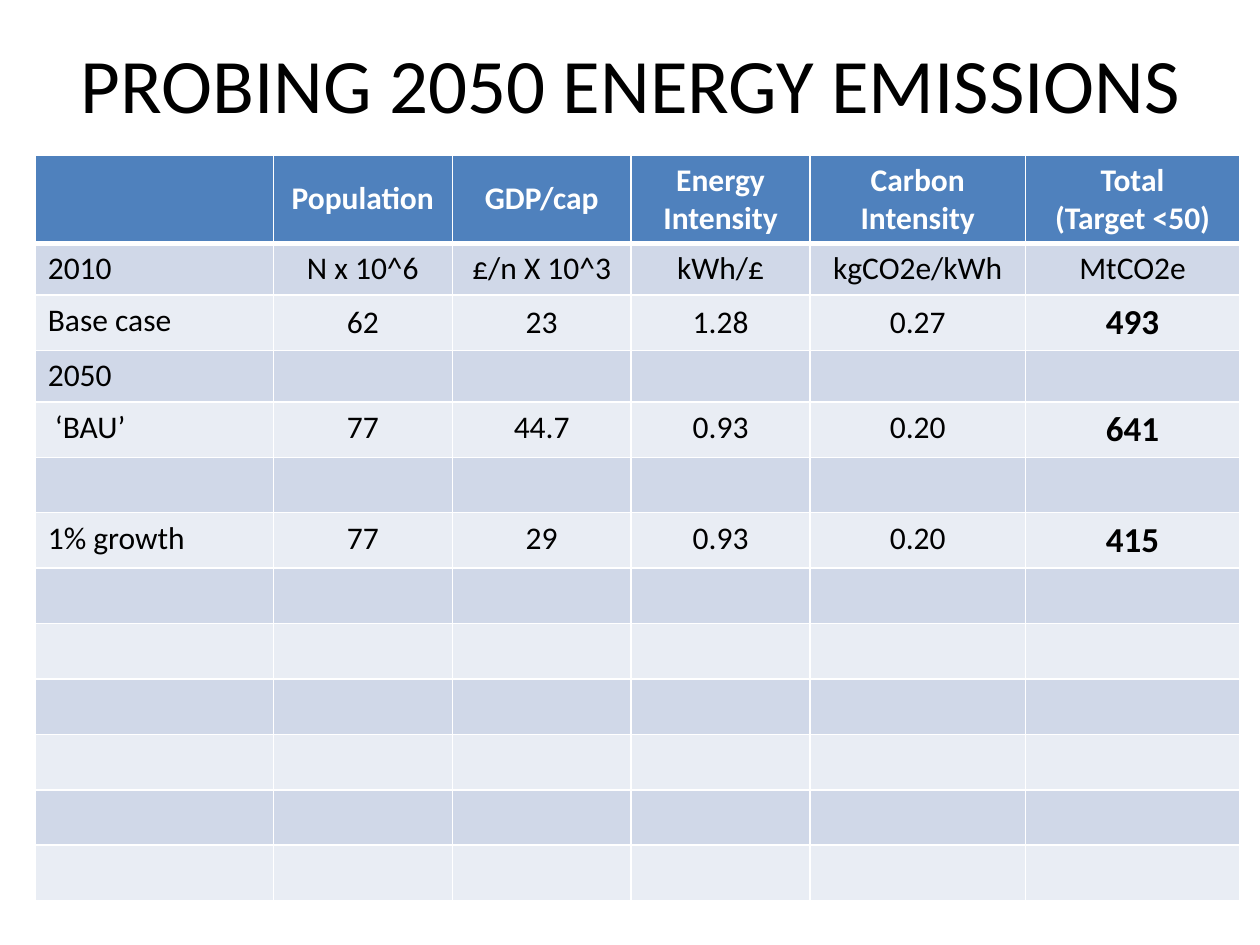
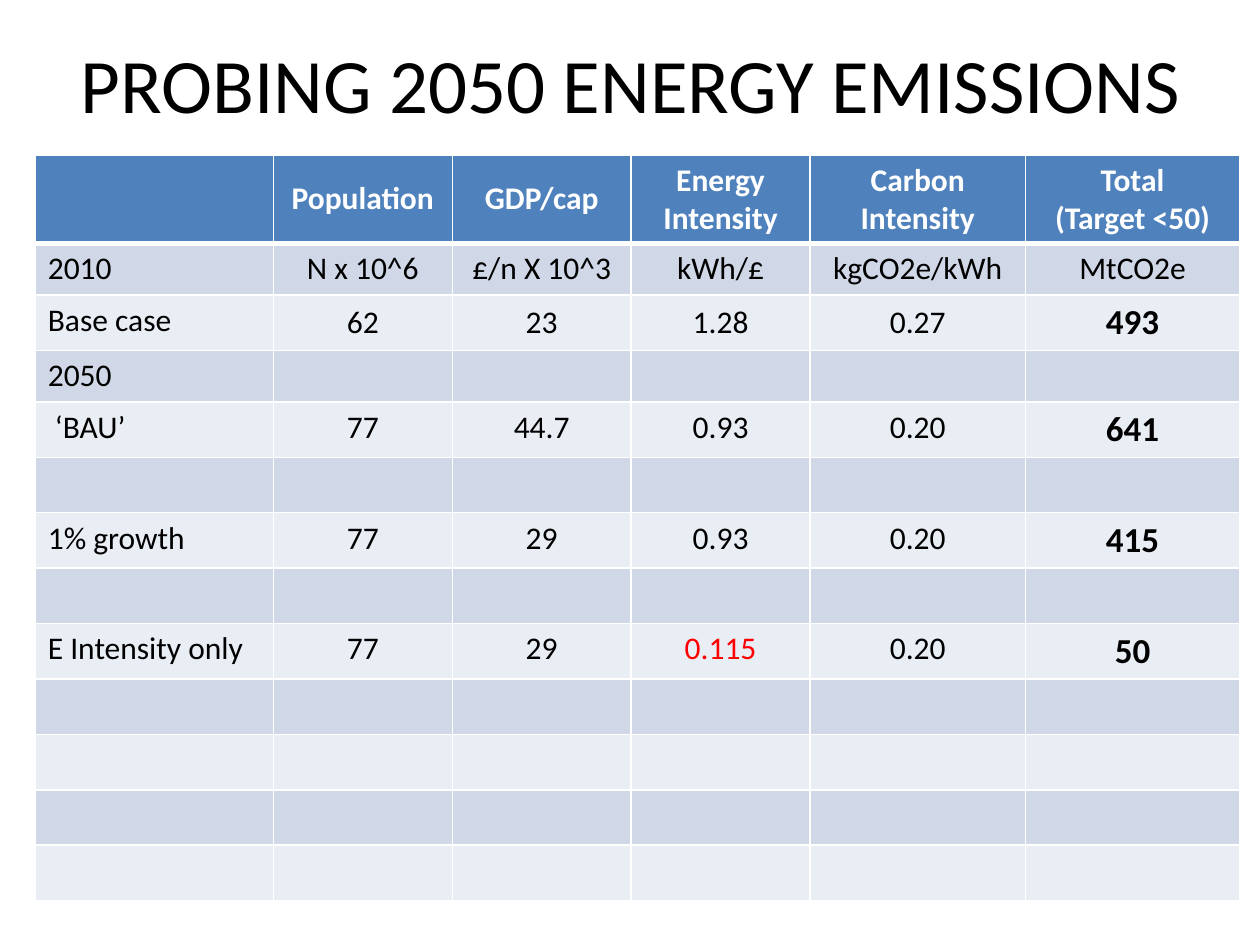
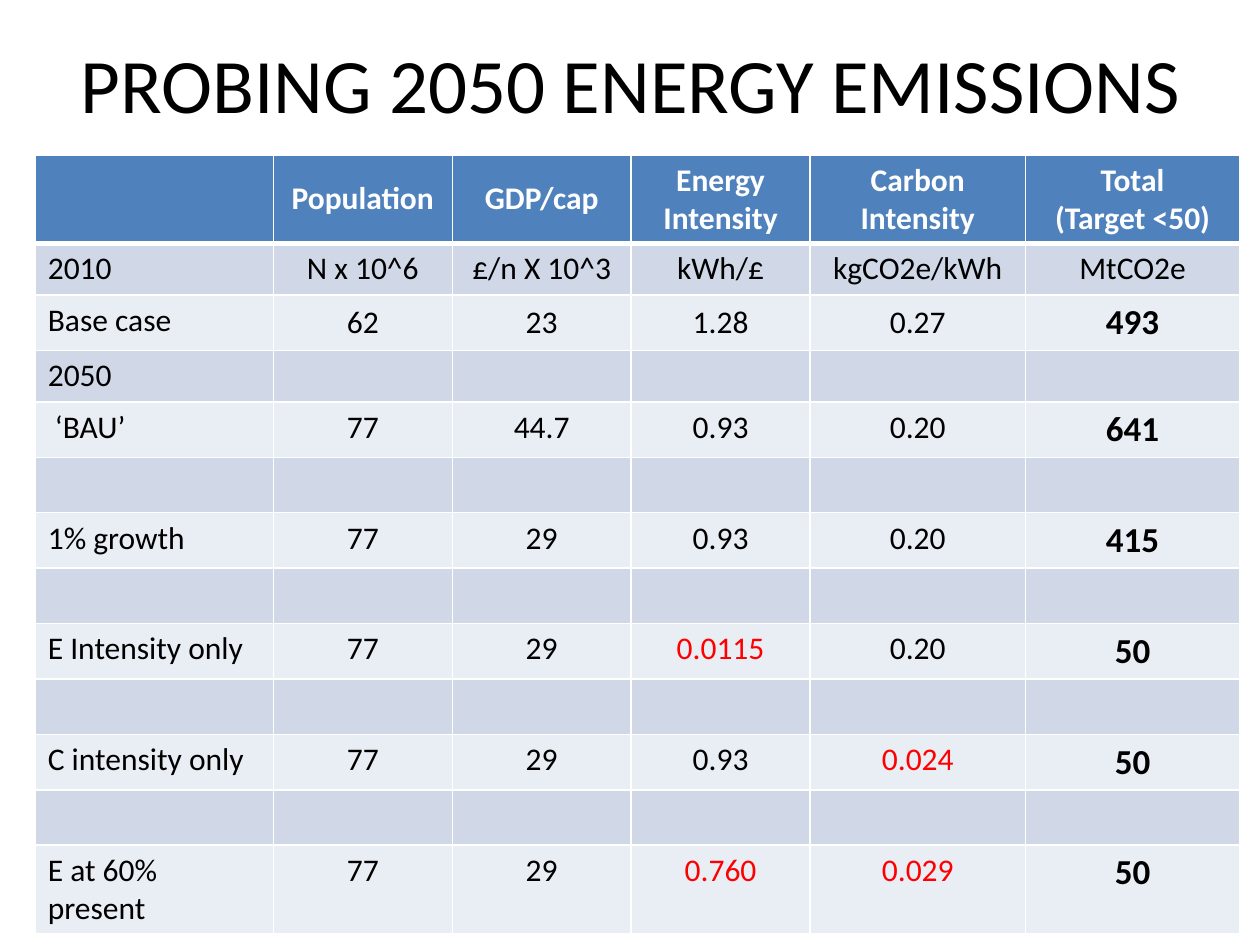
from lxml import etree
from pptx import Presentation
from pptx.dml.color import RGBColor
from pptx.enum import text
from pptx.oxml import ns
from pptx.util import Inches, Pt

# Shared style
FONT = "Calibri"
BLACK = RGBColor(0x00, 0x00, 0x00)
WHITE = RGBColor(0xFF, 0xFF, 0xFF)
RED = RGBColor(0xFF, 0x00, 0x00)
HEADER = RGBColor(0x4F, 0x81, 0xBD)
BANDS = [RGBColor(0xE9, 0xED, 0xF4), RGBColor(0xD0, 0xD8, 0xE8)]

TITLE = "PROBING 2050 ENERGY EMISSIONS"
COL_WIDTHS = [1.89, 1.42, 1.42, 1.42, 1.71, 1.7]
HEADER_H, TEXT_H, ROW_H = 0.7, 0.41, 0.44
ROW_HEIGHTS = [HEADER_H, TEXT_H, ROW_H, TEXT_H] + [ROW_H] * 9

# Table content
BLANK = [""] * 6
COMMON_ROWS = [
    ["", "Population", "GDP/cap", "Energy Intensity", "Carbon Intensity",
     "Total\n(Target <50)"],
    ["2010", "N x 10^6", "£/n X 10^3", "kWh/£", "kgCO2e/kWh", "MtCO2e"],
    ["Base case", "62", "23", "1.28", "0.27", "493"],
    ["2050"] + [""] * 5,
    [" ‘BAU’", "77", "44.7", "0.93", "0.20", "641"],
    BLANK,
    ["1% growth", "77", "29", "0.93", "0.20", "415"],
    BLANK,
]


def reach_target(name, energy, carbon):
    return [name, "77", "29", energy, carbon, "50"]


# Each slide: scenarios that meet the target, and the values they change
SLIDES = [
    ([], set()),
    ([reach_target("E Intensity only", "0.115", "0.20")], {"0.115"}),
    ([reach_target("E Intensity only", "0.0115", "0.20"),
      reach_target("C intensity only", "0.93", "0.024"),
      reach_target("E at 60% present", "0.760", "0.029")],
     {"0.0115", "0.024", "0.760", "0.029"}),
]


class Deck:
    def __init__(self):
        self.prs = Presentation()
        self.prs.slide_width, self.prs.slide_height = Inches(10), Inches(7.5)
        self.s = None

    def add_slide(self):
        self.s = self.prs.slides.add_slide(self.prs.slide_layouts[6])

    def style(self, tf, size, color, bold=False, align=text.PP_ALIGN.CENTER):
        for p in tf.paragraphs:
            p.alignment = align
            f = p.font
            f.name, f.size, f.bold = FONT, Pt(size), bold
            f.color.rgb = color

    def title(self, words):
        sp = self.s.shapes.add_textbox(Inches(0.51), Inches(0.03), Inches(9), Inches(1.25))
        tf = sp.text_frame
        tf.word_wrap = True
        tf.vertical_anchor = text.MSO_ANCHOR.MIDDLE
        tf.text = words
        self.style(tf, 44, BLACK)

    def borders(self, cell, top, bottom):
        tc_pr = cell._tc.get_or_add_tcPr()
        for side, width in (("L", 1), ("R", 1), ("T", top), ("B", bottom)):
            ln = etree.SubElement(tc_pr, ns.qn(f"a:ln{side}"), w=str(Pt(width)))
            fill = etree.SubElement(ln, ns.qn("a:solidFill"))
            etree.SubElement(fill, ns.qn("a:srgbClr"), val=str(WHITE))

    def cell(self, cell, words, row, col, changed):
        header, total = row == 0, col == 5 and row > 1 and words != ""
        self.borders(cell, 3 if row == 1 else 1, 3 if header else 1)
        cell.fill.solid()
        cell.fill.fore_color.rgb = HEADER if header else BANDS[row % 2]
        if header or (row == 2 and 0 < col < 5):
            cell.vertical_anchor = text.MSO_ANCHOR.MIDDLE
        cell.text = words
        color = WHITE if header else RED if words in changed else BLACK
        align = text.PP_ALIGN.CENTER if col else text.PP_ALIGN.LEFT
        self.style(cell.text_frame, 20 if total else 18, color, header or total, align)

    def table(self, rows, changed):
        heights = ROW_HEIGHTS[:]
        if rows[-1][0]:
            heights[-1] = HEADER_H  # two-line label
        tbl = self.s.shapes.add_table(
            len(rows), len(COL_WIDTHS), Inches(0.28), Inches(1.23),
            Inches(sum(COL_WIDTHS)), Inches(sum(heights))).table
        for column, width in zip(tbl.columns, COL_WIDTHS):
            column.width = Inches(width)
        for i, (row, height) in enumerate(zip(rows, heights)):
            tbl.rows[i].height = Inches(height)
            for j, words in enumerate(row):
                self.cell(tbl.cell(i, j), words, i, j, changed)


def main():
    deck = Deck()
    for scenarios, changed in SLIDES:
        rows = COMMON_ROWS[:]
        for scenario in scenarios:
            rows += [scenario, BLANK]
        rows += [BLANK] * len(ROW_HEIGHTS)
        deck.add_slide()
        deck.title(TITLE)
        deck.table(rows[:len(ROW_HEIGHTS)], changed)
    deck.prs.save("out.pptx")


if __name__ == "__main__":
    main()
